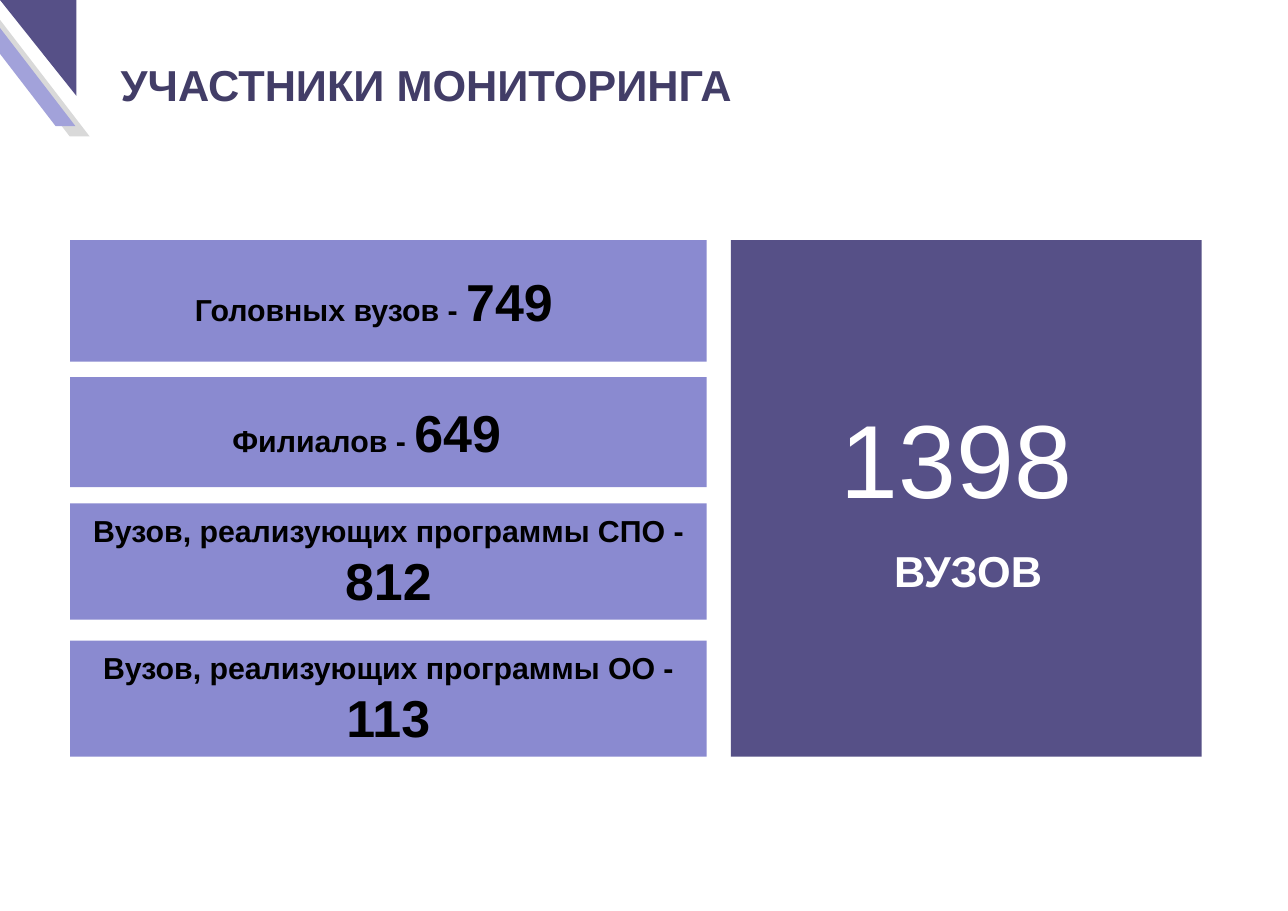
import pptx
import pptx.dml.color
import pptx.enum.shapes
import pptx.enum.text
import pptx.util

Pt = pptx.util.Pt
RECTANGLE = pptx.enum.shapes.MSO_SHAPE.RECTANGLE
CENTER = pptx.enum.text.PP_ALIGN.CENTER
MIDDLE = pptx.enum.text.MSO_ANCHOR.MIDDLE

THEME = {
    "font": "Arial",
    "color": {
        "heading": "423D67", "dark": "565087", "bar": "8A8AD0", "lilac": "A2A2DA",
        "grey": "D9D9D9", "black": "000000", "white": "FFFFFF",
    },
    "size": {"heading": 40, "label": 28, "value": 48, "total": 96, "unit": 40},
}


def paint(shape, color):
    shape.shadow.inherit = False
    shape.fill.solid()
    shape.fill.fore_color.rgb = pptx.dml.color.RGBColor.from_string(THEME["color"][color])
    shape.line.fill.background()


def style(font, color, size=None, bold=True):
    font.name = THEME["font"]
    font.bold = bold
    font.color.rgb = pptx.dml.color.RGBColor.from_string(THEME["color"][color])
    if size:
        font.size = Pt(THEME["size"][size])


deck = pptx.Presentation()
deck.slide_width, deck.slide_height = Pt(1190.16), Pt(841.68)
slide = deck.slides.add_slide(deck.slide_layouts[6])
shapes = slide.shapes

# Corner ornament
corner = [
    ("grey", [(0, 18.3), (82.8, 126), (64.4, 126), (0, 42.1)]),
    ("lilac", [(0, 25.8), (69.8, 116.6), (51.5, 116.6), (0, 49.7)]),
    ("dark", [(0, 0), (70.6, 0), (70.6, 88.6)]),
]
for color, points in corner:
    outline = [(Pt(x), Pt(y)) for x, y in points]
    builder = shapes.build_freeform(*outline[0])
    builder.add_line_segments(outline[1:], close=True)
    paint(builder.convert_to_shape(), color)

# Heading
heading = shapes.add_textbox(Pt(111.6), Pt(50.4), Pt(933.8), Pt(55.4)).text_frame
heading.word_wrap = True
heading.margin_left = 0
heading.text = "УЧАСТНИКИ МОНИТОРИНГА"
style(heading.paragraphs[0].font, "heading", "heading")

# Bars: label, value, top, height, right inset
bars = [
    ("Головных вузов - ", "749", 221.8, 112.3, 33.9),
    ("Филиалов - ", "649", 348.5, 101.5, 47.2),
    ("Вузов, реализующих программы СПО - ", "812", 465.1, 107.3, 7.2),
    ("Вузов, реализующих программы ОО - ", "113", 591.8, 107.3, 7.2),
]
for label, value, top, height, inset in bars:
    bar = shapes.add_shape(RECTANGLE, Pt(64.8), Pt(top), Pt(588.2), Pt(height))
    paint(bar, "bar")
    bar.text_frame.word_wrap = True
    bar.text_frame.vertical_anchor = MIDDLE
    bar.text_frame.margin_right = Pt(inset)
    line = bar.text_frame.paragraphs[0]
    line.alignment = CENTER
    style(line.font, "black")
    for text, size in ((label, "label"), (value, "value")):
        run = line.add_run()
        run.text = text
        style(run.font, "black", size)

# Total panel
panel = shapes.add_shape(RECTANGLE, Pt(675.4), Pt(221.8), Pt(434.9), Pt(477.3))
paint(panel, "dark")
total = panel.text_frame
total.word_wrap = True
total.vertical_anchor = MIDDLE
total.margin_right = Pt(25.5)
total.margin_bottom = Pt(9.1)
total.text = "1398\nВУЗОВ"
number, unit = total.paragraphs
number.alignment = unit.alignment = CENTER
unit.space_before = Pt(23.5)
unit._p.get_or_add_pPr().set("marL", str(Pt(22)))
style(number.font, "white", "total", bold=False)
style(unit.font, "white", "unit")

deck.save("out.pptx")
